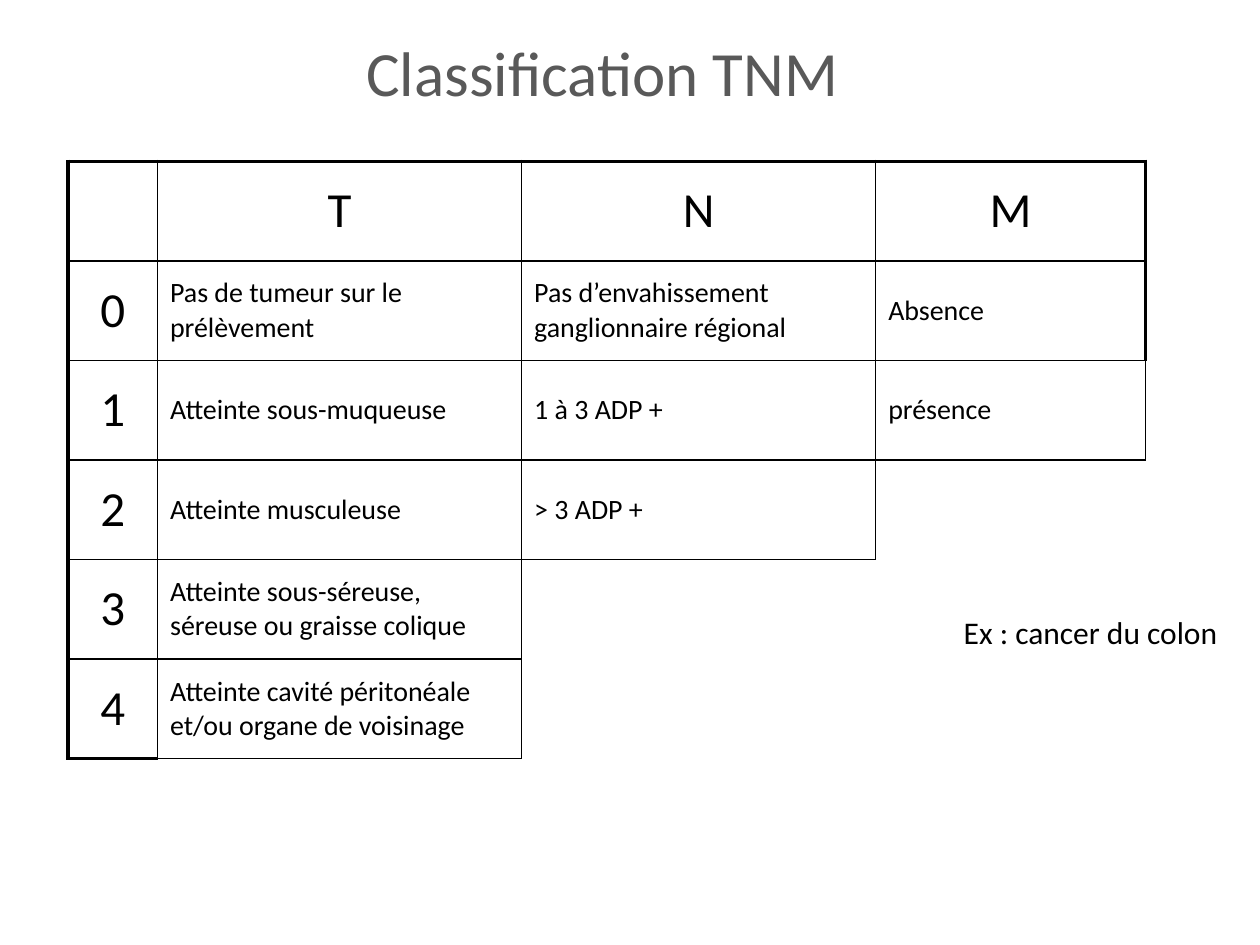
from lxml.etree import SubElement
from pptx import Presentation
from pptx.dml.color import RGBColor
from pptx.enum.text import MSO_ANCHOR, MSO_AUTO_SIZE, PP_ALIGN
from pptx.oxml.ns import qn
from pptx.util import Inches, Pt

BLACK = RGBColor(0x00, 0x00, 0x00)
GREY = RGBColor(0x59, 0x59, 0x59)

TITLE_FORMAT = {"name": "Calibri", "size": Pt(36)}
HEADING_FORMAT = {"name": "Calibri", "size": Pt(28)}
STAGE_FORMAT = {"name": "Calibri", "size": Pt(16)}
EXAMPLE_FORMAT = {"name": "Calibri", "size": Pt(18)}

THIN = Pt(1)
THICK = Pt(2.25)
COLUMN_WIDTHS = [0.71, 2.89, 2.81, 2.14]
ROW_HEIGHT = 0.79
STAGES = [
    ["", "T", "N", "M"],
    ["0", "Pas de tumeur sur le prélèvement",
     "Pas d’envahissement ganglionnaire régional", "Absence"],
    ["1", "Atteinte sous-muqueuse", "1 à 3 ADP +", "présence"],
    ["2", "Atteinte musculeuse", "> 3 ADP +"],
    ["3", "Atteinte sous-séreuse, séreuse ou graisse colique"],
    ["4", "Atteinte cavité péritonéale et/ou organe de voisinage"],
]


def write_text(frame, text, font_format, color=BLACK, align=PP_ALIGN.LEFT):
    paragraph = frame.paragraphs[0]
    paragraph.alignment = align
    run = paragraph.add_run()
    run.text = text
    for attribute, value in font_format.items():
        setattr(run.font, attribute, value)
    run.font.color.rgb = color


def add_title(slide):
    title = slide.shapes.title
    title.left, title.top = Inches(0.28), Inches(0.13)
    title.width, title.height = Inches(9), Inches(0.87)
    title.text_frame.vertical_anchor = MSO_ANCHOR.MIDDLE
    write_text(title.text_frame, "Classification TNM", TITLE_FORMAT, GREY,
               PP_ALIGN.CENTER)


def is_used(row, column):
    return 0 <= row < len(STAGES) and 0 <= column < len(STAGES[row])


def border_widths(row, column):
    neighbours = {
        "L": (row, column - 1),
        "R": (row, column + 1),
        "T": (row - 1, column),
        "B": (row + 1, column),
    }
    thick_sides = {
        "L": column == 0,
        "R": column == len(COLUMN_WIDTHS) - 1 and row < 2,
        "T": row == 0,
        "B": column == 0 and row == len(STAGES) - 1,
    }
    used = is_used(row, column)
    return {
        side: THICK if thick_sides[side]
        else THIN if used or is_used(*neighbour) else None
        for side, neighbour in neighbours.items()
    }


def draw_borders(cell, widths):
    properties = cell._tc.get_or_add_tcPr()
    for side, width in widths.items():
        line = SubElement(properties, qn(f"a:ln{side}"))
        if width is None:
            SubElement(line, qn("a:noFill"))
            continue
        line.set("w", str(width))
        fill = SubElement(line, qn("a:solidFill"))
        SubElement(fill, qn("a:srgbClr")).set("val", str(BLACK))


def fill_cell(cell, row, column):
    draw_borders(cell, border_widths(row, column))
    cell.fill.background()
    cell.vertical_anchor = MSO_ANCHOR.MIDDLE
    if not is_used(row, column) or not STAGES[row][column]:
        return
    is_heading = row == 0 or column == 0
    write_text(cell.text_frame, STAGES[row][column],
               HEADING_FORMAT if is_heading else STAGE_FORMAT,
               align=PP_ALIGN.CENTER if is_heading else PP_ALIGN.LEFT)


def add_stage_table(slide):
    table = slide.shapes.add_table(
        len(STAGES), len(COLUMN_WIDTHS), Inches(0.54), Inches(1.28),
        Inches(sum(COLUMN_WIDTHS)), Inches(ROW_HEIGHT * len(STAGES))).table
    table.first_row = False
    table.horz_banding = False
    for column, width in zip(table.columns, COLUMN_WIDTHS):
        column.width = Inches(width)
    for row_index, row in enumerate(table.rows):
        row.height = Inches(ROW_HEIGHT)
        for column_index, cell in enumerate(row.cells):
            fill_cell(cell, row_index, column_index)


def add_example(slide):
    example = slide.shapes.add_textbox(
        Inches(7.55), Inches(4.82), Inches(2.24), Inches(0.4))
    example.text_frame.word_wrap = False
    example.text_frame.auto_size = MSO_AUTO_SIZE.SHAPE_TO_FIT_TEXT
    write_text(example.text_frame, "Ex : cancer du colon", EXAMPLE_FORMAT)


def main():
    presentation = Presentation()
    presentation.slide_width = Inches(10)
    presentation.slide_height = Inches(7.5)
    slide = presentation.slides.add_slide(presentation.slide_layouts[5])
    add_title(slide)
    add_stage_table(slide)
    add_example(slide)
    presentation.save("out.pptx")


if __name__ == "__main__":
    main()
